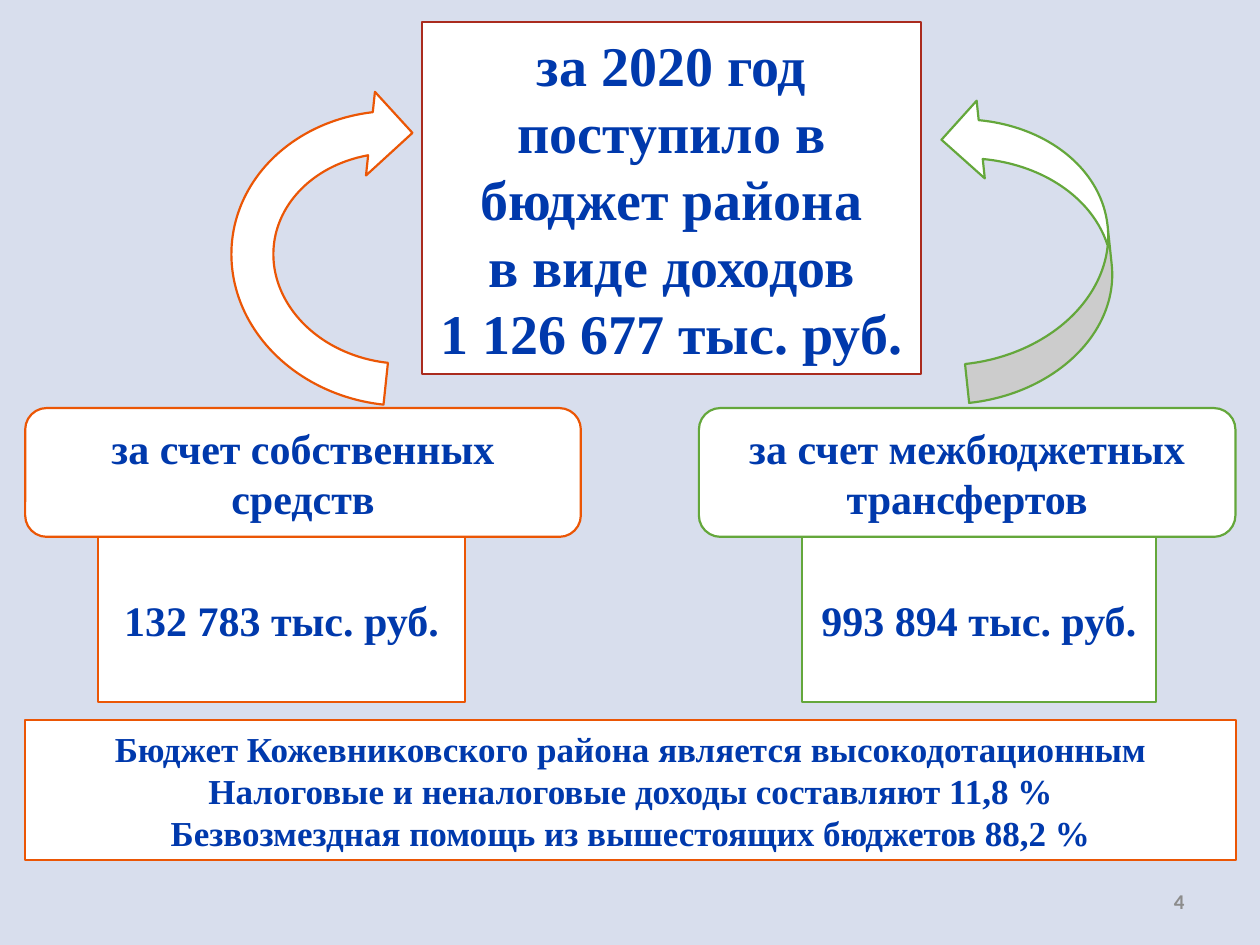
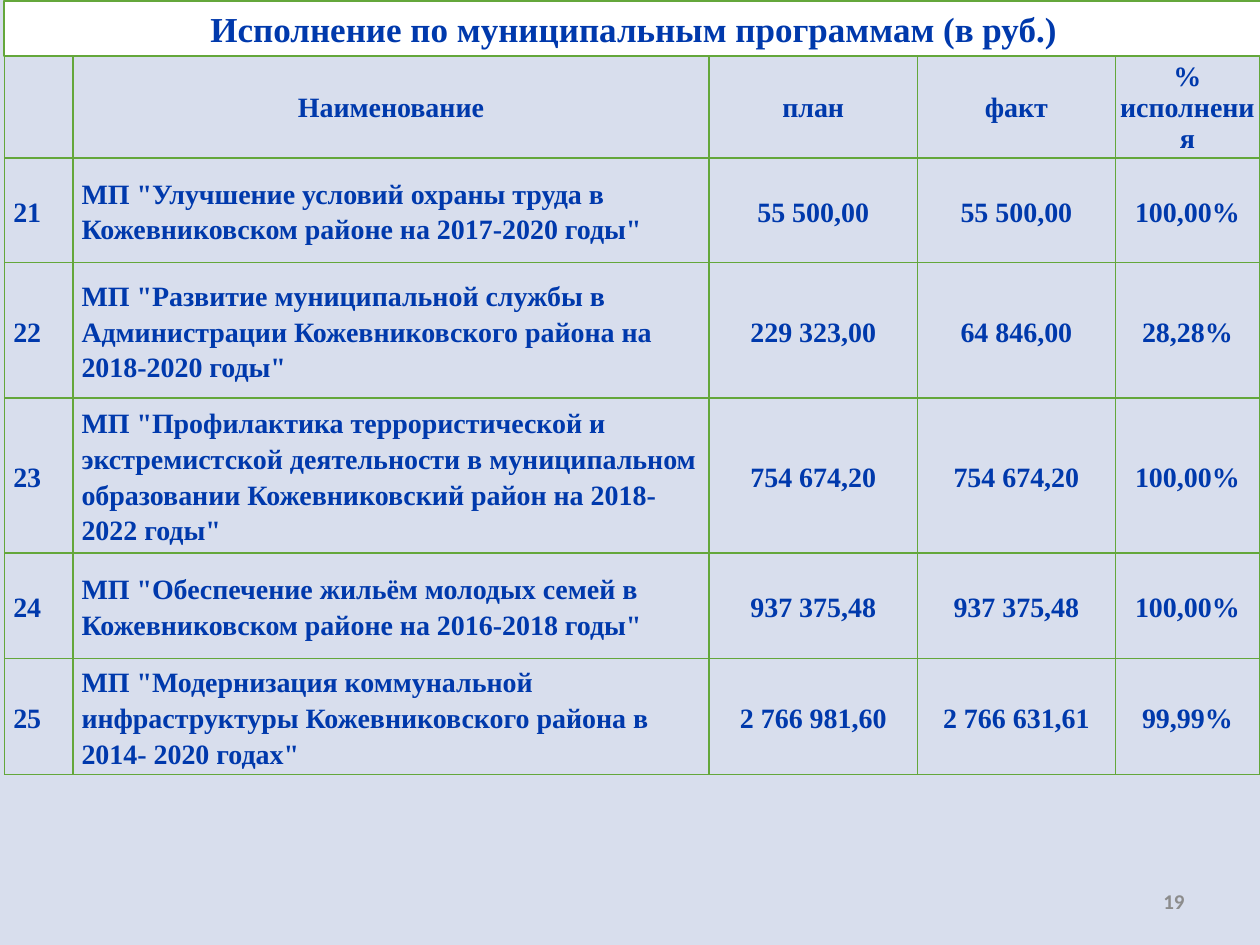
from dataclasses import dataclass

from lxml import etree
from pptx import Presentation
from pptx import util as u
from pptx.dml.color import RGBColor
from pptx.enum import shapes, text
from pptx.oxml.ns import qn

WHITE, INK, GREY, BACK = "FFFFFF", "0039AC", "8C8C8C", "D8DEED"
ORANGE, GREEN, RED = "EB5605", "64A73B", "AA2B1E"
SERIF, SANS = "Times New Roman", "Calibri"
KIND, ALIGN, MIDDLE = shapes.MSO_SHAPE, text.PP_ALIGN, text.MSO_ANCHOR.MIDDLE
ROW_SPACING = 1.15


@dataclass
class Panel:
    left: float
    top: float
    width: float
    height: float
    line: str
    size: float = 24
    lines: tuple[str, ...] = ()
    kind: KIND = KIND.RECTANGLE
    rotation: float = 0


INCOME_PANELS = [
    Panel(14.4, 411.6, 692, 80, ORANGE, 20, (
        "Бюджет Кожевниковского района является высокодотационным "
        "Налоговые и неналоговые доходы составляют 11,8 %",
        "Безвозмездная помощь из вышестоящих бюджетов 88,2 %")),
    Panel(241.2, 12.7, 285, 201, RED, 32, (
        "за 2020 год", "поступило в бюджет района", "в виде доходов",
        "1 126 677 тыс. руб.")),
    Panel(14.4, 233.2, 317.5, 73.6, ORANGE, lines=("за счет собственных средств",),
          kind=KIND.ROUNDED_RECTANGLE),
    Panel(399.4, 233.2, 306.6, 73.6, GREEN, lines=("за счет межбюджетных трансфертов",),
          kind=KIND.ROUNDED_RECTANGLE),
    Panel(56, 306.8, 209.7, 94.3, ORANGE, lines=("132 783 тыс. руб.",)),
    Panel(458.2, 306.8, 202.4, 94.3, GREEN, lines=("993 894 тыс. руб.",)),
    Panel(132, 39.6, 192.2, 216, ORANGE, kind=KIND.CIRCULAR_ARROW, rotation=276.1),
    Panel(502.4, 94.6, 173.5, 89.3, GREEN, kind=KIND.CURVED_UP_ARROW, rotation=264),
]

TABLE_TITLE = Panel(2.2, 0.7, 720, 31.5, GREEN, 20,
                    ("Исполнение по муниципальным программам (в руб.)",))
COLUMN_WIDTHS = [39, 363.7, 118.9, 113.3, 82.2]
ROW_HEIGHTS = [58.3, 59.6, 77.6, 88.4, 60.5, 66.2]
PROGRAMS = [
    ("", "Наименование", "план", "факт", "% исполнения"),
    ("21", 'МП "Улучшение условий охраны труда в Кожевниковском районе на 2017-2020 годы"',
     "55 500,00", "55 500,00", "100,00%"),
    ("22", 'МП "Развитие муниципальной службы в Администрации Кожевниковского района '
     'на 2018-2020 годы"', "229 323,00", "64 846,00", "28,28%"),
    ("23", 'МП "Профилактика террористической и экстремистской деятельности в муниципальном '
     'образовании Кожевниковский район на 2018-2022 годы"',
     "754 674,20", "754 674,20", "100,00%"),
    ("24", 'МП "Обеспечение жильём молодых семей в Кожевниковском районе на 2016-2018 годы"',
     "937 375,48", "937 375,48", "100,00%"),
    ("25", 'МП "Модернизация коммунальной инфраструктуры Кожевниковского района '
     'в 2014- 2020 годах"', "2 766 981,60", "2 766 631,61", "99,99%"),
]


def rgb(color: str) -> RGBColor:
    return RGBColor.from_string(color)


def write(tf, lines, size: float, align=ALIGN.CENTER, spacing: float = 1,
          color: str = INK, font: str = SERIF) -> None:
    for i, line in enumerate(lines):
        p = tf.add_paragraph() if i else tf.paragraphs[0]
        p.alignment, p.line_spacing = align, spacing
        r = p.add_run()
        r.text = line
        r.font.size, r.font.name, r.font.bold = u.Pt(size), font, True
        r.font.color.rgb = rgb(color)


def add_panel(s, panel: Panel) -> None:
    sp = s.shapes.add_shape(panel.kind, u.Pt(panel.left), u.Pt(panel.top),
                            u.Pt(panel.width), u.Pt(panel.height))
    sp.rotation = panel.rotation
    sp.shadow.inherit = False
    sp.fill.solid()
    sp.fill.fore_color.rgb = rgb(WHITE)
    sp.line.color.rgb = rgb(panel.line)
    sp.line.width = u.Pt(1.25)
    tf = sp.text_frame
    tf.word_wrap, tf.vertical_anchor = True, MIDDLE
    write(tf, panel.lines, panel.size)


def add_slide(prs, number: int):
    """Add a blank slide with the shared background and page number."""
    s = prs.slides.add_slide(prs.slide_layouts[6])
    s.background.fill.solid()
    s.background.fill.fore_color.rgb = rgb(BACK)
    tf = s.shapes.add_textbox(u.Pt(516.2), u.Pt(500.4), u.Pt(167.8), u.Pt(28.8)).text_frame
    tf.word_wrap, tf.vertical_anchor = True, MIDDLE
    write(tf, [str(number)], 12, ALIGN.RIGHT, color=GREY, font=SANS)
    return s


def set_borders(cell, color: str, width: float) -> None:
    tc_pr = cell._tc.get_or_add_tcPr()
    for i, side in enumerate(("lnL", "lnR", "lnT", "lnB")):
        ln = etree.Element(qn(f"a:{side}"), w=str(u.Pt(width)))
        fill = etree.SubElement(ln, qn("a:solidFill"))
        etree.SubElement(fill, qn("a:srgbClr"), val=color)
        tc_pr.insert(i, ln)


def add_programs_table(s) -> None:
    frame = s.shapes.add_table(len(PROGRAMS), len(COLUMN_WIDTHS), u.Pt(2.6), u.Pt(32.1),
                               u.Pt(sum(COLUMN_WIDTHS)), u.Pt(sum(ROW_HEIGHTS)))
    table = frame.table
    for column, width in zip(table.columns, COLUMN_WIDTHS):
        column.width = u.Pt(width)
    for i, (values, height) in enumerate(zip(PROGRAMS, ROW_HEIGHTS)):
        table.rows[i].height = u.Pt(height)
        header = i == 0
        for j, value in enumerate(values):
            cell = table.cell(i, j)
            cell.fill.background()
            set_borders(cell, GREEN, 1)
            cell.vertical_anchor = MIDDLE
            cell.margin_left = cell.margin_right = u.Pt(0.7 if header else 5)
            cell.margin_top = u.Pt(0.7 if header else 0)
            cell.margin_bottom = u.Pt(0)
            if value:
                align = ALIGN.CENTER if header or j > 1 else ALIGN.LEFT
                write(cell.text_frame, [value], 16, align, 1 if header else ROW_SPACING)


def main() -> None:
    prs = Presentation()
    prs.slide_width, prs.slide_height = u.Pt(720), u.Pt(540)

    income = add_slide(prs, 4)
    for panel in INCOME_PANELS:
        add_panel(income, panel)

    programs = add_slide(prs, 19)
    add_panel(programs, TABLE_TITLE)
    add_programs_table(programs)

    prs.save("out.pptx")


if __name__ == "__main__":
    main()
